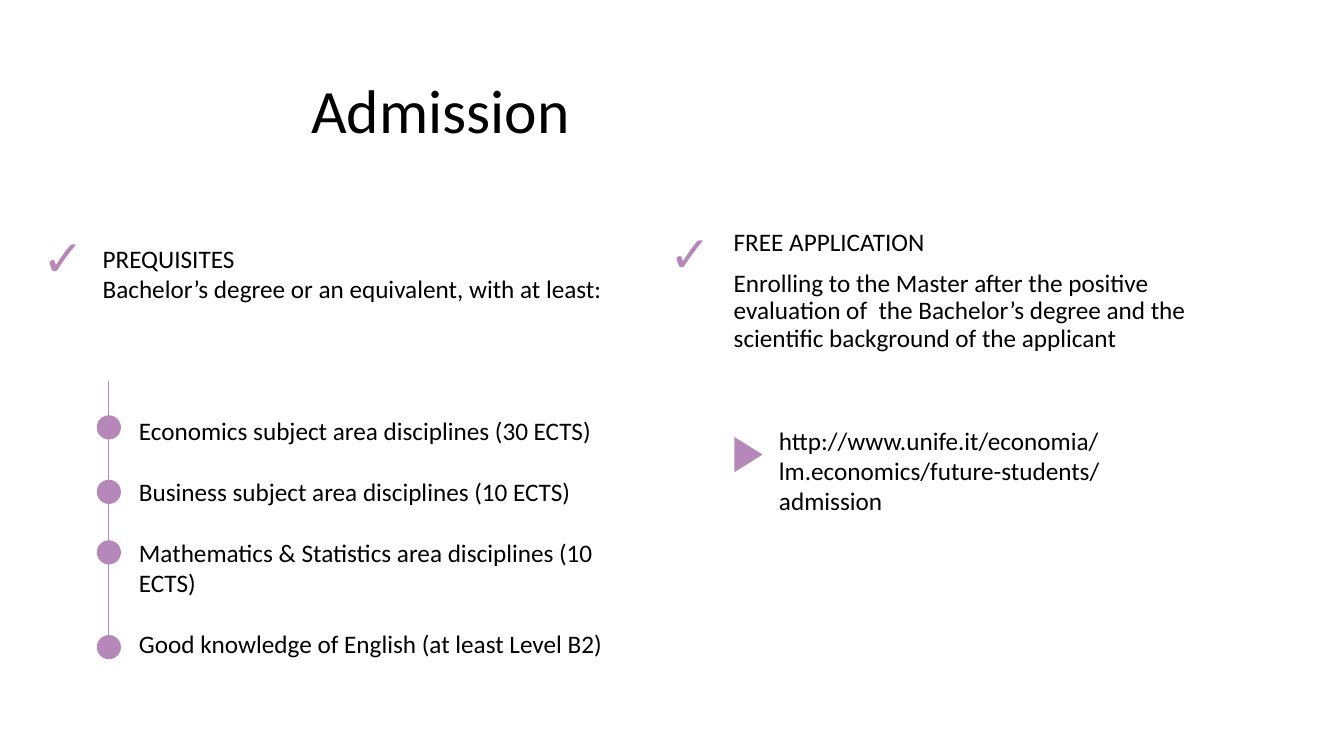
import pptx
import pptx.util
import pptx.oxml.ns
import pptx.dml.color
import pptx.enum.text
import pptx.enum.shapes
from lxml import etree

COLOURS = {"text": "000000", "accent": "B688B9"}
FONT = "Calibri"
SLIDE_WIDTH, SLIDE_HEIGHT = pptx.util.Inches(13.33), pptx.util.Inches(7.5)
COLUMNS, ROWS = 40, 30
TICK_SIZE = (1.8, 2.84)
DOT_SIZE = (0.72, 0.96)
DOT_ROWS = (8.2, 10.76, 13.16, 16.92)
DISCIPLINES = (
    "Economics subject area disciplines (30 ECTS)",
    "Business subject area disciplines (10 ECTS)",
    "Mathematics & Statistics area disciplines (10 ECTS)",
    "Good knowledge of English (at least Level B2)",
)


def colour(name):
    """Return the named palette colour."""
    return pptx.dml.color.RGBColor.from_string(COLOURS[name])


def across(columns):
    """Turn grid columns into a length."""
    return round(SLIDE_WIDTH * columns / COLUMNS)


def down(rows):
    """Turn grid rows into a length."""
    return round(SLIDE_HEIGHT * rows / ROWS)


def inside(box, column, row, columns, rows):
    """Return a grid box offset from the corner of another box."""
    return box[0] + column, box[1] + row, columns, rows


def measure(box):
    """Turn a grid box into left, top, width and height."""
    return across(box[0]), down(box[1]), across(box[2]), down(box[3])


def add_text(slide, box, lines, size=18, ink="text", gap=0, frame_format=None, **spacing):
    """Write paragraphs in a text box, with a gap between them."""
    frame = slide.shapes.add_textbox(*measure(box)).text_frame
    for key, value in {"word_wrap": True, **(frame_format or {})}.items():
        setattr(frame, key, value)
    for index, line in enumerate(lines):
        paragraph = frame.paragraphs[0] if index == 0 else frame.add_paragraph()
        paragraph.text = line
        before = pptx.util.Pt(gap if index else 0)
        for key, value in {"space_before": before, **spacing}.items():
            setattr(paragraph, key, value)
        for key, value in {"name": FONT, "size": pptx.util.Pt(size)}.items():
            setattr(paragraph.font, key, value)
        paragraph.font.color.rgb = colour(ink)


def add_tick(slide, box):
    """Put the tick in the top left corner of a region."""
    fit = pptx.enum.text.MSO_AUTO_SIZE.SHAPE_TO_FIT_TEXT
    add_text(slide, inside(box, 0, 0, *TICK_SIZE), ["✓"], 36, "accent",
             frame_format={"word_wrap": False, "auto_size": fit})


def add_marker(slide, box, kind, rotation=0):
    """Draw a plain accent marker."""
    marker = slide.shapes.add_shape(kind, *measure(box))
    marker.rotation = rotation
    marker.shadow.inherit = False
    marker.fill.solid()
    marker.fill.fore_color.rgb = colour("accent")
    marker.line.fill.background()


def add_timeline(slide, box):
    """Draw the vertical line with its dots."""
    axis = box[0] + 2.28
    stem = slide.shapes.add_connector(
        pptx.enum.shapes.MSO_CONNECTOR.STRAIGHT,
        across(axis), down(box[1] + 6.36), across(axis), down(box[1] + 17.24))
    stem.line.color.rgb = colour("accent")
    stem.line.width = pptx.util.Pt(0.5)
    etree.SubElement(stem._element.spPr, pptx.oxml.ns.qn("a:effectLst"))
    width, height = DOT_SIZE
    for row in DOT_ROWS:
        dot_box = inside(box, 2.28 - width / 2, row - height / 2, width, height)
        add_marker(slide, dot_box, pptx.enum.shapes.MSO_SHAPE.OVAL)


def add_title(slide, box):
    """Write the slide title."""
    middle = pptx.enum.text.MSO_ANCHOR.MIDDLE
    add_text(slide, box, ["Admission"], 44,
             frame_format={"vertical_anchor": middle}, line_spacing=0.9)


def add_requirements(slide, box):
    """Place the entry requirements with their timeline."""
    add_tick(slide, box)
    add_text(slide, inside(box, 1.8, 0.68, 16.44, 2.84),
             ["PREQUISITES", "Bachelor’s degree or an equivalent, with at least:"])
    add_timeline(slide, box)
    add_text(slide, inside(box, 2.88, 7.52, 14.52, 10.08), DISCIPLINES, gap=22)


def add_application(slide, box):
    """Place the application notes and the web address."""
    add_tick(slide, box)
    add_text(slide, inside(box, 1.92, 0.32, 15.39, 5.16),
             ["FREE APPLICATION",
              "Enrolling to the Master after the positive evaluation of  the "
              "Bachelor’s degree and the scientific background of the applicant"],
             gap=10, line_spacing=0.9)
    add_marker(slide, inside(box, 2.13, 8.88, 1.05, 1.12),
               pptx.enum.shapes.MSO_SHAPE.ISOSCELES_TRIANGLE, 90)
    add_text(slide, inside(box, 3.27, 8.08, 13.17, 2.84),
             ["http://www.unife.it/economia/lm.economics/future-students/admission"])


def main():
    """Build the admission slide."""
    deck = pptx.Presentation()
    deck.slide_width, deck.slide_height = SLIDE_WIDTH, SLIDE_HEIGHT
    slide = deck.slides.add_slide(deck.slide_layouts[6])
    add_title(slide, (8.97, 1.6, 28.35, 5.8))
    add_requirements(slide, (0.96, 8.76, 18.24, 17.6))
    add_application(slide, (19.62, 8.6, 17.31, 10.92))
    deck.save("out.pptx")


if __name__ == "__main__":
    main()
